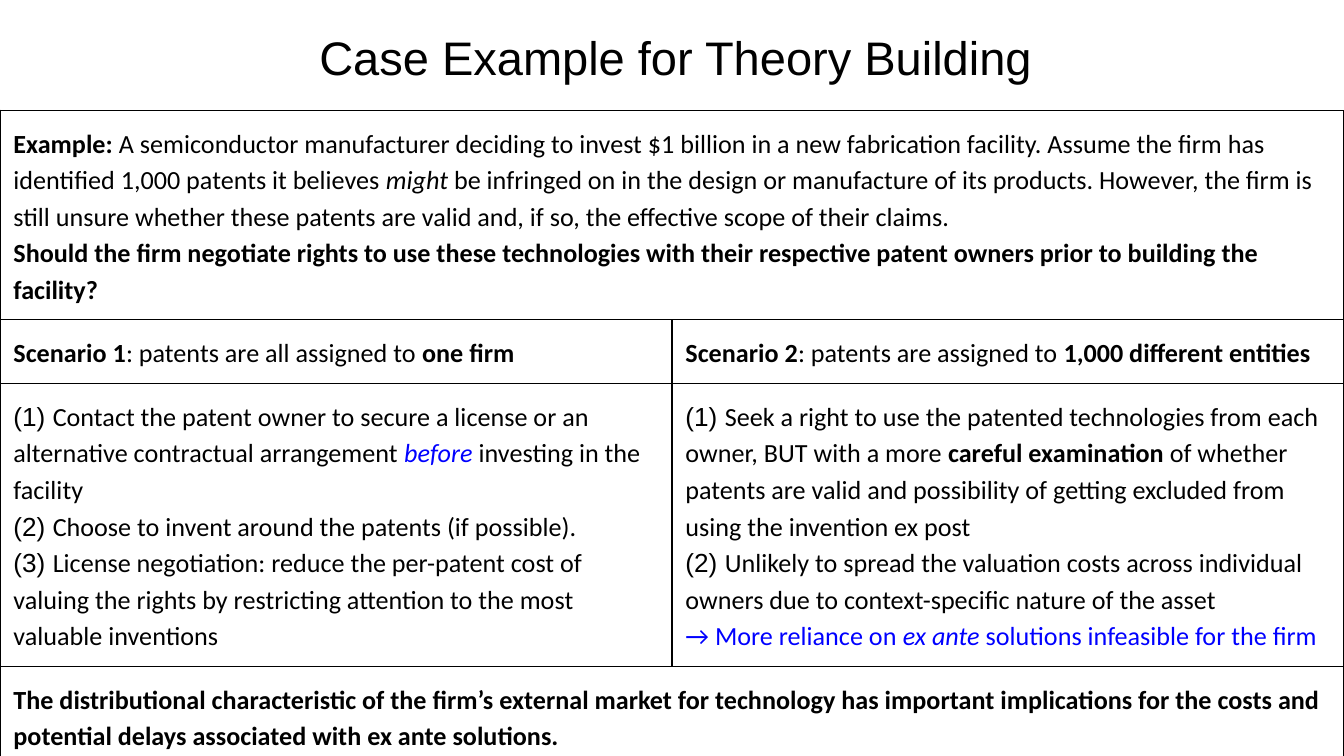
from lxml.etree import SubElement
from pptx import Presentation
from pptx.dml.color import RGBColor
from pptx.enum.text import MSO_ANCHOR, PP_ALIGN
from pptx.oxml.ns import qn
from pptx.util import Pt

COLORS = {"text": "000000", "accent": "0000FF", "border": "000000", "cell": "FFFFFF"}
PAGE_WIDTH, PAGE_HEIGHT = 720, 405
TABLE_TOP = 59
INSET = 7.2
ROW_HEIGHTS = [92, 25, 110, 40]
COLUMN_COUNT = 2

TITLE = "Case Example for Theory Building"

# Each row lists its cells, each cell its paragraphs, each paragraph its runs:
# (text, styles...). A row with one cell spans the whole table.
ROWS = [
    [[
        [("Example: ", "bold"),
         ("A semiconductor manufacturer deciding to invest $1 billion in a new fabrication "
          "facility. Assume the firm has identified 1,000 patents it believes ",),
         ("might ", "italic"),
         ("be infringed on in the design or manufacture of its products. However, the firm is "
          "still unsure whether these patents are valid and, if so, the effective scope of "
          "their claims.",)],
        [("Should the firm negotiate rights to use these technologies with their respective "
          "patent owners prior to building the facility?", "bold")],
    ]],
    [
        [[("Scenario 1", "bold"), (": patents are all assigned to ",), ("one firm", "bold")]],
        [[("Scenario 2", "bold"), (": patents are assigned to ",),
          ("1,000 different entities", "bold")]],
    ],
    [
        [
            [("(1) ", "number"),
             ("Contact the patent owner to secure a license or an alternative contractual "
              "arrangement ",),
             ("before ", "italic", "accent"),
             ("investing in the facility",)],
            [("(2) ", "number"), ("Choose to invent around the patents (if possible).",)],
            [("(3) ", "number"),
             ("License negotiation: reduce the per-patent cost of valuing the rights by "
              "restricting attention to the most valuable inventions",)],
        ],
        [
            [("(1) ", "number"),
             ("Seek a right to use the patented technologies from each owner, BUT with a more ",),
             ("careful examination ", "bold"),
             ("of whether patents are valid and possibility of getting excluded from using the "
              "invention ex post",)],
            [("(2) ", "number"),
             ("Unlikely to spread the valuation costs across individual owners due to "
              "context-specific nature of the asset",)],
            [("→ More reliance on ", "accent"), ("ex ante ", "italic", "accent"),
             ("solutions infeasible for the firm", "accent")],
        ],
    ],
    [[
        [("The distributional characteristic of the firm’s external market for technology has "
          "important implications for the costs and potential delays associated with ex ante "
          "solutions.", "bold")],
    ]],
]


def add_span(para, text, size, styles=()):
    span = para.add_run()
    span.text = text
    font = span.font
    font.size = Pt(size)
    font.name = "Arial" if "number" in styles or "title" in styles else "Calibri"
    font.bold = "bold" in styles
    font.italic = "italic" in styles
    font.color.rgb = RGBColor.from_string(COLORS["accent" if "accent" in styles else "text"])


def set_insets(target):
    for side in ("left", "right", "top", "bottom"):
        setattr(target, f"margin_{side}", Pt(INSET))


def format_cell(cell):
    """Give the cell its insets, plain fill and four thin borders."""
    set_insets(cell)
    cell.vertical_anchor = MSO_ANCHOR.TOP
    cell.fill.solid()
    cell.fill.fore_color.rgb = RGBColor.from_string(COLORS["cell"])
    properties = cell._tc.get_or_add_tcPr()
    for index, edge in enumerate(("a:lnL", "a:lnR", "a:lnT", "a:lnB")):
        line = SubElement(properties, qn(edge), w=str(Pt(0.75)))
        SubElement(SubElement(line, qn("a:solidFill")), qn("a:srgbClr"), val=COLORS["border"])
        properties.insert(index, line)


def write_cell(cell, paragraphs):
    frame = cell.text_frame
    for index, spans in enumerate(paragraphs):
        para = frame.add_paragraph() if index else frame.paragraphs[0]
        para.line_spacing = 1.15
        for text, *styles in spans:
            add_span(para, text, 14, styles)


def add_title(page):
    box = page.shapes.title
    box.left, box.top, box.width, box.height = Pt(4), Pt(8), Pt(716), Pt(45)
    frame = box.text_frame
    set_insets(frame)
    frame.word_wrap = True
    frame.vertical_anchor = MSO_ANCHOR.MIDDLE
    para = frame.paragraphs[0]
    para.alignment = PP_ALIGN.CENTER
    add_span(para, TITLE, 25.2, ("title",))


def add_case_table(page):
    table = page.shapes.add_table(
        len(ROWS), COLUMN_COUNT, Pt(0), Pt(TABLE_TOP), Pt(PAGE_WIDTH), Pt(sum(ROW_HEIGHTS))
    ).table
    table.first_row = table.horz_banding = False
    for column in table.columns:
        column.width = Pt(PAGE_WIDTH / COLUMN_COUNT)
    for row, height in zip(table.rows, ROW_HEIGHTS):
        row.height = Pt(height)
    for cell in table.iter_cells():
        format_cell(cell)
    for row_index, contents in enumerate(ROWS):
        if len(contents) == 1:
            table.cell(row_index, 0).merge(table.cell(row_index, COLUMN_COUNT - 1))
        for column_index, paragraphs in enumerate(contents):
            write_cell(table.cell(row_index, column_index), paragraphs)


def main():
    deck = Presentation()
    deck.slide_width, deck.slide_height = Pt(PAGE_WIDTH), Pt(PAGE_HEIGHT)
    page = deck.slides.add_slide(deck.slide_layouts[5])
    add_title(page)
    add_case_table(page)
    deck.save("out.pptx")


if __name__ == "__main__":
    main()
